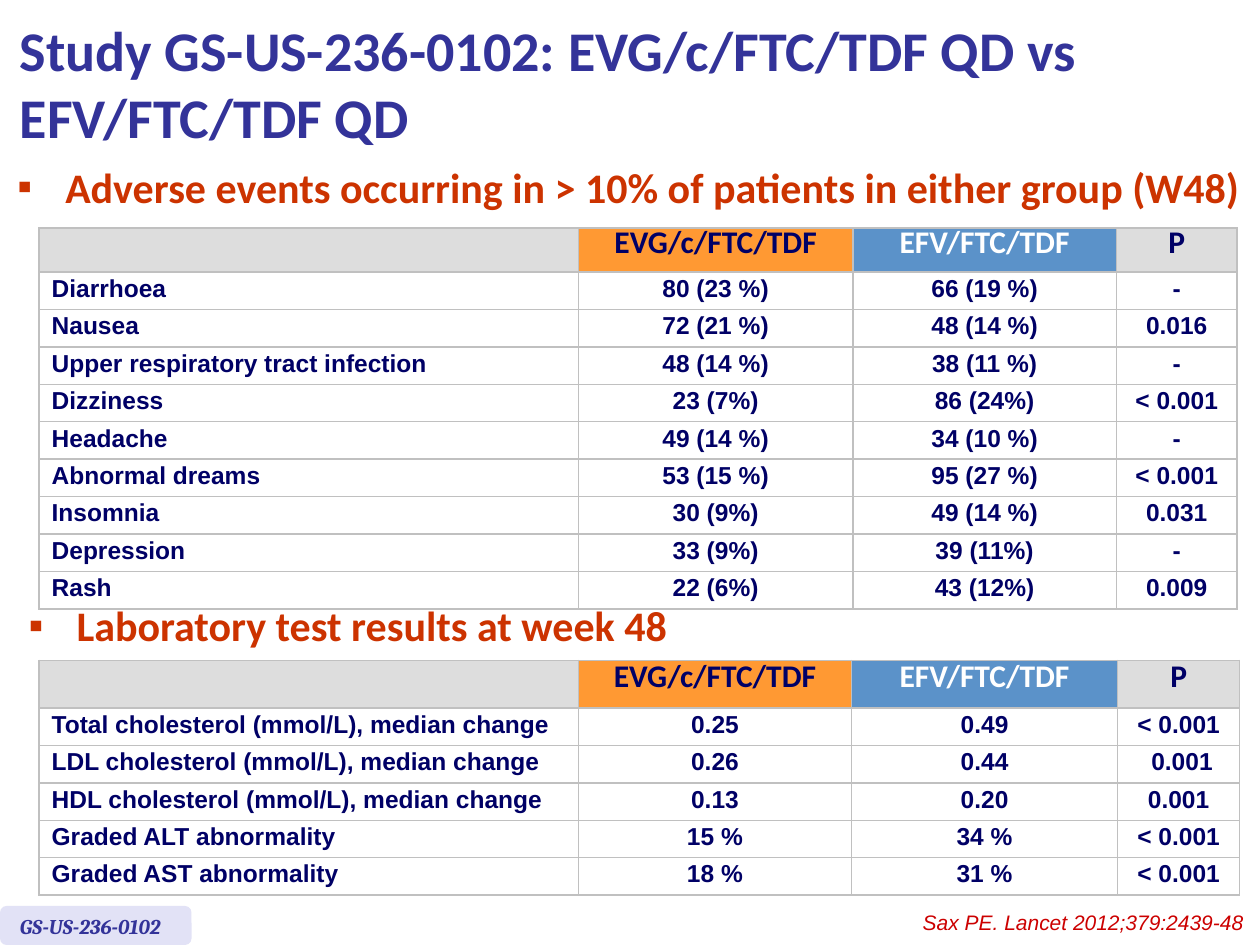
"""Build a slide of adverse events and laboratory results for study GS-US-236-0102."""
from lxml import etree
from pptx import Presentation
from pptx.dml.color import RGBColor
from pptx.enum.shapes import MSO_SHAPE
from pptx.enum.text import MSO_ANCHOR, PP_ALIGN
from pptx.oxml.ns import qn
from pptx.util import Inches, Pt

ROUNDED = MSO_SHAPE.ROUNDED_RECTANGLE
TOP, MIDDLE = MSO_ANCHOR.TOP, MSO_ANCHOR.MIDDLE
LEFT, CENTER, RIGHT = PP_ALIGN.LEFT, PP_ALIGN.CENTER, PP_ALIGN.RIGHT

THEME = {
    "fill": {"header": ["DDDDDD", "FF9933", "5B92C9", "DDDDDD"],
             "body": "FFFFFF", "tag": "E2E2F6"},
    "border": "C0C0C0",
    "border_width": Pt(1),
    "table_line": Pt(13.5),
    "empty_size": Pt(12),
    "indent": Inches(0.38),
    "text": {
        "title": ("333399", {"name": "Calibri", "size": Pt(32), "bold": True}),
        "heading": ("CC3300", {"name": "Calibri", "size": Pt(24), "bold": True}),
        "header": ("000066", {"name": "Calibri", "size": Pt(18), "bold": True}),
        "header_light": ("FFFFFF", {"name": "Calibri", "size": Pt(18), "bold": True}),
        "body": ("000066", {"name": "Arial", "size": Pt(14), "bold": True}),
        "citation": ("CC0000", {"name": "Arial", "size": Pt(12), "italic": True}),
        "tag": ("333399", {"name": "Cambria", "size": Pt(12), "bold": True, "italic": True}),
    },
}

TITLE = "Study GS-US-236-0102: EVG/c/FTC/TDF QD vs EFV/FTC/TDF QD"
HEADER = ["", "EVG/c/FTC/TDF", "EFV/FTC/TDF", "P"]
HEADER_STYLES = ["header", "header", "header_light", "header"]
ROW_HEIGHT = 2.97 / 10

TABLES = [
    {"heading": "Adverse events occurring in > 10% of patients in either group (W48)",
     "heading_at": (0.04, 1.23, 9.96, 0.51),
     "at": (0.31, 1.81),
     "columns": [4.28, 2.18, 2.09, 0.96],
     "header_height": 0.35,
     "rows": [
         ("Diarrhoea", "80 (23 %)", "66 (19 %)", "-"),
         ("Nausea", "72 (21 %)", "48 (14 %)", "0.016"),
         ("Upper respiratory tract infection", "48 (14 %)", "38 (11 %)", "-"),
         ("Dizziness", "23 (7%)", "86 (24%)", "< 0.001"),
         ("Headache", "49 (14 %)", "34 (10 %)", "-"),
         ("Abnormal dreams", "53 (15 %)", "95 (27 %)", "< 0.001"),
         ("Insomnia", "30 (9%)", "49 (14 %)", "0.031"),
         ("Depression", "33 (9%)", "39 (11%)", "-"),
         ("Rash", "22 (6%)", "43 (12%)", "0.009"),
     ]},
    {"heading": "Laboratory test results at week 48",
     "heading_at": (0.13, 4.71, 9.87, 0.51),
     "at": (0.31, 5.24),
     "columns": [4.28, 2.17, 2.11, 0.97],
     "header_height": 0.38,
     "rows": [
         ("Total cholesterol (mmol/L), median change", "0.25", "0.49", "< 0.001"),
         ("LDL cholesterol (mmol/L), median change", "0.26", "0.44", " 0.001"),
         ("HDL cholesterol (mmol/L), median change", "0.13", "0.20", "0.001"),
         ("Graded ALT abnormality", "15 %", "34 %", "< 0.001"),
         ("Graded AST abnormality", "18 %", "31 %", "< 0.001"),
     ]},
]


def write(para, text, style, align=LEFT):
    para.alignment = align
    if not text:
        size = str(THEME["empty_size"].centipoints)
        etree.SubElement(para._p, qn("a:endParaRPr"), sz=size)
        return
    span = para.add_run()
    span.text = text
    color, values = THEME["text"][style]
    span.font.color.rgb = RGBColor.from_string(color)
    for name, value in values.items():
        setattr(span.font, name, value)


def add_text(page, at, text, style, align=LEFT, anchor=TOP):
    box = page.shapes.add_textbox(*map(Inches, at))
    box.text_frame.word_wrap = True
    box.text_frame.vertical_anchor = anchor
    para = box.text_frame.paragraphs[0]
    write(para, text, style, align)
    return para


def add_heading(page, at, text):
    properties = add_text(page, at, text, "heading")._p.get_or_add_pPr()
    properties.set("marL", str(THEME["indent"]))
    properties.set("indent", str(-THEME["indent"]))
    bullet_color = etree.SubElement(properties, qn("a:buClr"))
    etree.SubElement(bullet_color, qn("a:srgbClr"), val=THEME["text"]["heading"][0])
    etree.SubElement(properties, qn("a:buFont"), typeface="Arial")
    etree.SubElement(properties, qn("a:buChar"), char="▪")


def add_borders(cell):
    properties = cell._tc.get_or_add_tcPr()
    for side in ("a:lnL", "a:lnR", "a:lnT", "a:lnB"):
        line = etree.SubElement(properties, qn(side), w=str(THEME["border_width"]))
        fill = etree.SubElement(line, qn("a:solidFill"))
        etree.SubElement(fill, qn("a:srgbClr"), val=THEME["border"])


def format_cell(cell, text, style, align, fill):
    add_borders(cell)
    cell.fill.solid()
    cell.fill.fore_color.rgb = RGBColor.from_string(fill)
    cell.vertical_anchor = MIDDLE
    para = cell.text_frame.paragraphs[0]
    para.line_spacing = THEME["table_line"]
    write(para, text, style, align)


def add_results(page, content):
    rows = [HEADER, *content["rows"]]
    heights = [content["header_height"]] + [ROW_HEIGHT] * len(content["rows"])
    size = sum(content["columns"]), sum(heights)
    frame = page.shapes.add_table(len(rows), len(HEADER), *map(Inches, content["at"] + size))
    table = frame.table
    for column, width in zip(table.columns, content["columns"]):
        column.width = Inches(width)
    for row, height in zip(table.rows, heights):
        row.height = Inches(height)
    for r, values in enumerate(rows):
        for c, text in enumerate(values):
            style = "body" if r else HEADER_STYLES[c]
            fill = THEME["fill"]["body"] if r else THEME["fill"]["header"][c]
            format_cell(table.cell(r, c), text, style, CENTER if c else LEFT, fill)


def add_tag(page):
    tag = page.shapes.add_shape(ROUNDED, *map(Inches, (0, 7.19, 1.52, 0.31)))
    tag.shadow.inherit = False
    tag.fill.solid()
    tag.fill.fore_color.rgb = RGBColor.from_string(THEME["fill"]["tag"])
    tag.line.fill.background()
    add_text(page, (0.06, 7.2, 1.41, 0.3), "GS-US-236-0102", "tag")


def main():
    deck = Presentation()
    deck.slide_width, deck.slide_height = Inches(10), Inches(7.5)
    page = deck.slides.add_slide(deck.slide_layouts[6])
    for content in TABLES:
        add_heading(page, content["heading_at"], content["heading"])
        add_results(page, content)
    add_text(page, (6.97, 7.17, 3, 0.3), "Sax PE. Lancet 2012;379:2439-48", "citation", RIGHT)
    add_tag(page)
    add_text(page, (0.06, 0.05, 9.55, 1.21), TITLE, "title", anchor=MIDDLE)
    deck.save("out.pptx")


if __name__ == "__main__":
    main()
